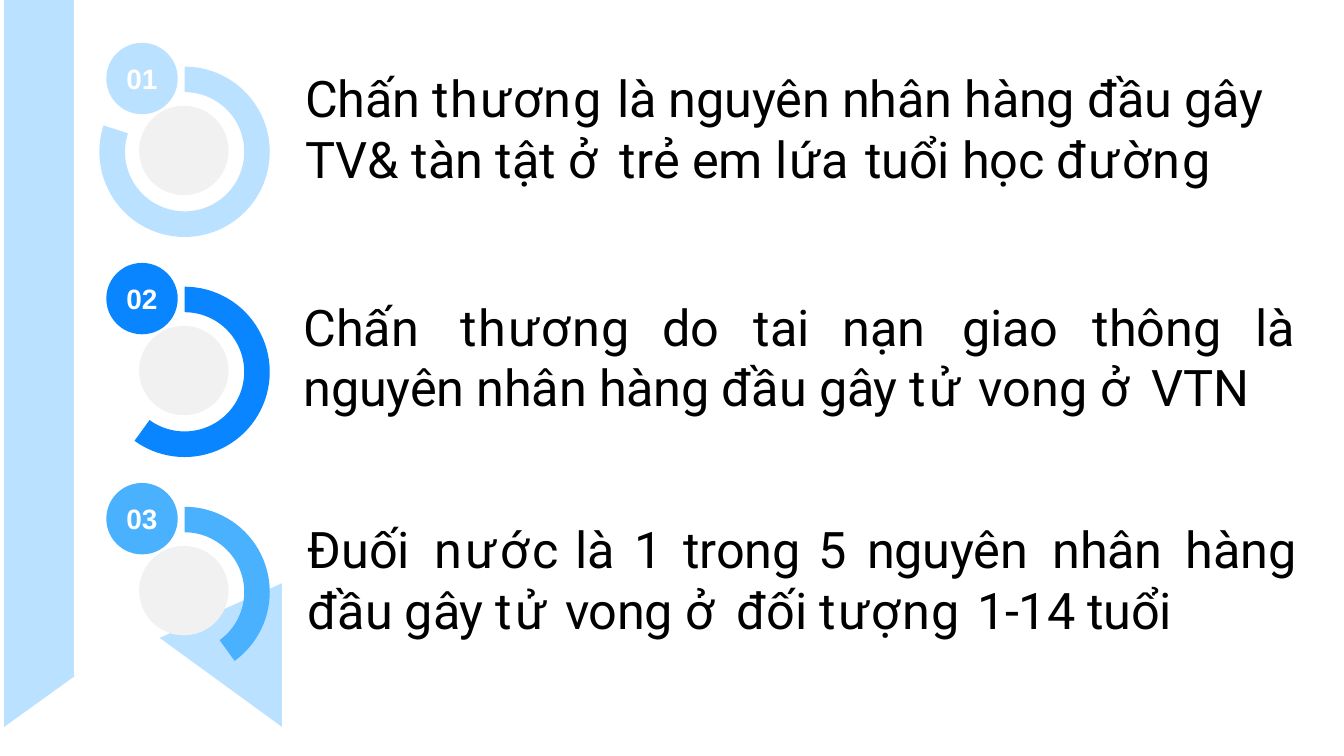
from pptx import Presentation
from pptx import util as u
from pptx.dml.color import RGBColor
from pptx.enum import shapes, text
from pptx.oxml import parse_xml
from pptx.oxml.ns import nsdecls

COLORS = {"pale": "BAE1FF", "strong": "0885FF", "mid": "4AB1FF",
          "disc": "F1F1F1", "white": "FFFFFF", "black": "000000"}

# Outlines in cm: the pale ribbon, then the white panel that covers its middle
RIBBON = [
    ("pale", [(5.33, 0), (0.08, 0), (0.08, 13.74), (2.72, 11.84), (5.33, 13.74)]),
    ("white", [(9.37, 0), (1.4, 0), (1.4, 12.78), (5.38, 11), (9.37, 12.78)]),
]

# Each span is (wording, letter spacing in points); lengths are in cm
ITEMS = [
    {"number": "01", "color": "pale", "arc_end": 198,
     "at": (5.77, 1.27, 19.3, 2.6), "tabs": [],
     "spans": [("Chấn ", -0.1), ("thương ", 0.9),
               ("là nguyên nhân hàng đầu gây ", -0.1), ("TV& tàn tật ", 0),
               ("ở ", 2.6), ("trẻ ", 0), ("em ", -0.1), ("lứa ", 0.9),
               ("tuổi học ", -0.1), ("đường", 1.1)]},
    {"number": "02", "color": "strong", "arc_end": 126,
     "at": (5.74, 5.59, 18.74, 3.4),
     "tabs": [2.97, 6.78, 8.51, 10.19, 12.45, 14.91, 17.98],
     "spans": [("Chấ", -0.1), ("n\t", 0), ("th", 0.9), ("ư", 1.2),
               ("ơng\t", 0.8), ("do\ttai\tnạ", -0.1), ("n\t", 0),
               ("giao", -0.1), ("\tth", 0), ("ôn", -0.1), ("g\t", 0),
               ("là", -0.1), (" ", 6.5), ("nguyên nhân hàng đầu gây ", -0.1),
               ("tử ", 1.6), ("vong ", 0), ("ở ", 2.7), ("VTN", -0.1)]},
    {"number": "03", "color": "mid", "arc_end": 54,
     "at": (5.82, 9.8, 18.74, 2.4),
     "tabs": [2.39, 5.05, 6.17, 7.09, 9.65, 10.57, 14.07, 16.59],
     "spans": [("Đuối\t", -0.1), ("nướ", 1.9), ("c\t", 0), ("là\t1", -0.1),
               ("\ttro", 0), ("ng\t5\tnguyê", -0.1), ("n\t", 0),
               ("nhâ", -0.1), ("n\t", 0), ("hàng đầu gây ", -0.1),
               ("tử ", 1.6), ("vong ", -0.1), ("ở ", 2.6), ("đối ", -0.1),
               ("tượng ", 1.1), ("1-14 tuổi", -0.1)]},
]
PITCH = 4.16
RING = (1.88, 1.26, 3.22)  # left, top in the first row, diameter
DISC = (2.63, 2.0, 1.69)
BADGE = (2.01, 0.81, 1.35)
RING_THICKNESS = 0.15
ARC_START = 270


def paint(shape, color):
    shape.shadow.inherit = False
    shape.fill.solid()
    shape.fill.fore_color.rgb = RGBColor.from_string(COLORS[color])
    shape.line.fill.background()


def add_outline(page, color, points):
    start, *rest = [(u.Cm(x), u.Cm(y)) for x, y in points]
    builder = page.shapes.build_freeform(*start)
    builder.add_line_segments(rest, close=True)
    paint(builder.convert_to_shape(), color)


def add_round(page, kind, place, row, color):
    left, top, size = place
    shape = page.shapes.add_shape(kind, u.Cm(left), u.Cm(top + row * PITCH),
                                  u.Cm(size), u.Cm(size))
    paint(shape, color)
    return shape


def clear_margins(frame):
    frame.margin_left = frame.margin_right = 0
    frame.margin_top = frame.margin_bottom = 0


def add_span(para, wording, font, size, color, bold=False, spacing=0):
    span = para.add_run()
    span.text = wording
    span.font.name = font
    span.font.size = u.Pt(size)
    span.font.bold = bold
    span.font.color.rgb = RGBColor.from_string(COLORS[color])
    span.font._element.set("spc", str(round(spacing * 100)))


def add_tabs(para, stops):
    marks = "".join(f'<a:tab pos="{u.Cm(stop)}" algn="l"/>' for stop in stops)
    para._p.get_or_add_pPr().append(
        parse_xml(f'<a:tabLst {nsdecls("a")}>{marks}</a:tabLst>'))


def add_dial(page, row, item):
    """Draw the open ring, its grey disc and the numbered badge."""
    ring = add_round(page, shapes.MSO_SHAPE.BLOCK_ARC, RING, row, item["color"])
    # Angles are stored in 1/60000 degree, and python-pptx divides by 100000
    ring.adjustments[0] = ARC_START * 0.6
    ring.adjustments[1] = item["arc_end"] * 0.6
    ring.adjustments[2] = RING_THICKNESS
    add_round(page, shapes.MSO_SHAPE.OVAL, DISC, row, "disc")
    badge = add_round(page, shapes.MSO_SHAPE.OVAL, BADGE, row, item["color"])
    frame = badge.text_frame
    clear_margins(frame)
    frame.vertical_anchor = text.MSO_ANCHOR.MIDDLE
    para = frame.paragraphs[0]
    para.alignment = text.PP_ALIGN.CENTER
    add_span(para, item["number"], "Arial", 15, "white", bold=True)


def add_statement(page, item):
    box = page.shapes.add_textbox(*map(u.Cm, item["at"]))
    frame = box.text_frame
    frame.word_wrap = True
    clear_margins(frame)
    para = frame.paragraphs[0]
    if item["tabs"]:
        add_tabs(para, item["tabs"])
    for wording, spacing in item["spans"]:
        add_span(para, wording, "Roboto", 27, "black", spacing=spacing)


def main():
    deck = Presentation()
    deck.slide_width, deck.slide_height = u.Cm(25.4), u.Cm(14.29)
    page = deck.slides.add_slide(deck.slide_layouts[6])
    for color, points in RIBBON:
        add_outline(page, color, points)
    for row, item in enumerate(ITEMS):
        add_dial(page, row, item)
        add_statement(page, item)
    deck.save("out.pptx")


if __name__ == "__main__":
    main()
